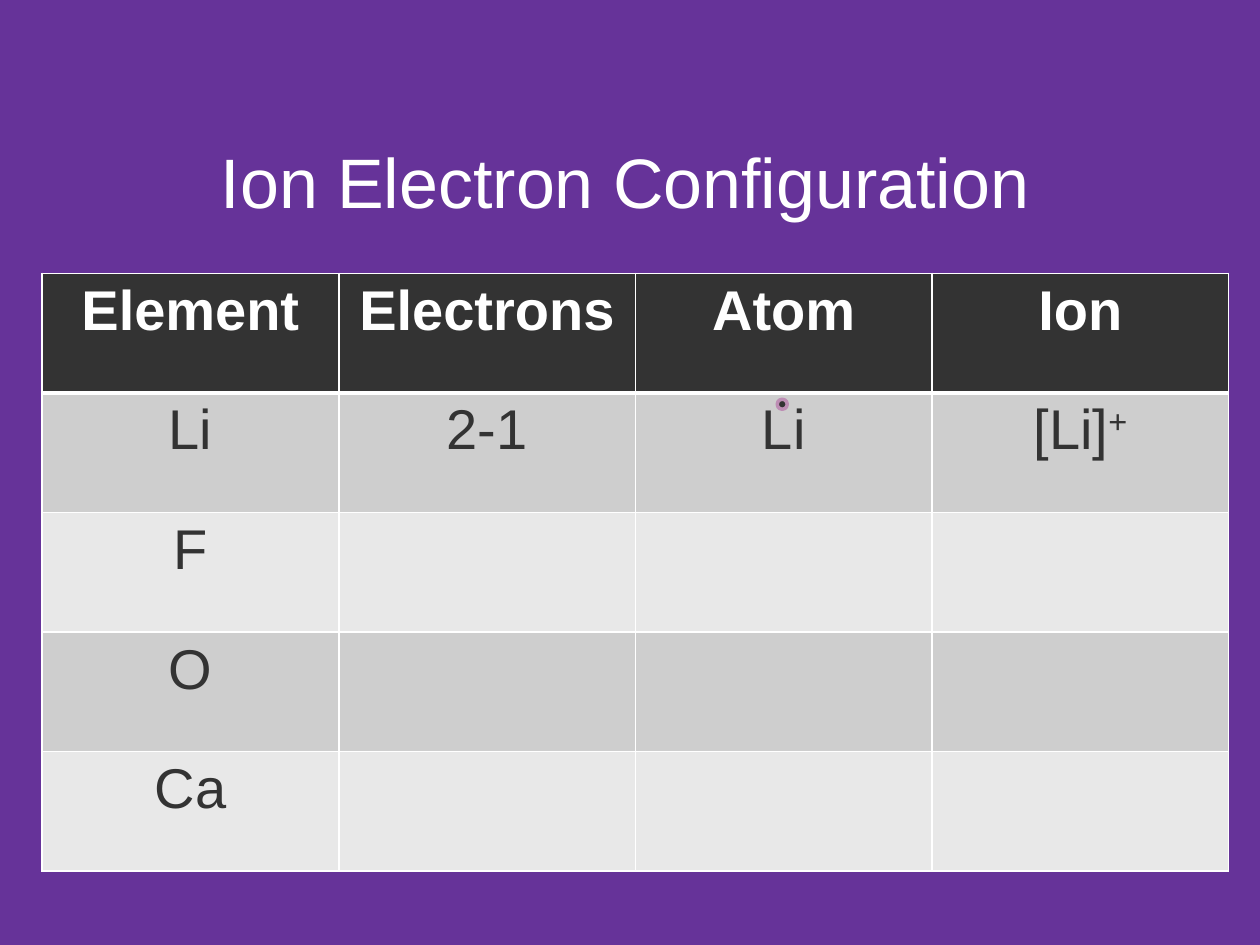
from dataclasses import dataclass

from lxml.etree import SubElement
from pptx import Presentation
from pptx.dml.color import RGBColor
from pptx.enum.shapes import MSO_SHAPE as Shape
from pptx.enum.text import MSO_ANCHOR as Anchor, MSO_AUTO_SIZE as AutoSize, PP_ALIGN as Align
from pptx.oxml.ns import qn
from pptx.util import Cm, Pt


@dataclass(frozen=True)
class Theme:
    font: str = "Arial"
    title_size: int = 40
    cell_size: int = 32
    background: str = "663399"
    light: str = "FFFFFF"
    dark: str = "333333"
    bands: tuple = ("CECECE", "E8E8E8")
    electron_ring: str = "BD8DB4"


THEME = Theme()

# Each cell is a list of (text, is_superscript) runs.
HEADERS = ["Element", "Electrons", "Atom", "Ion"]
ROWS = [
    [[("Li", False)], [("2-1", False)], [("Li", False)], [("[Li]", False), ("+", True)]],
    [[("F", False)]],
    [[("O", False)]],
    [[("Ca", False)]],
]


def paint(fill, color):
    fill.solid()
    fill.fore_color.rgb = RGBColor.from_string(color)


def add_run(paragraph, text, size, color, bold=False, superscript=False):
    run = paragraph.add_run()
    run.text = text
    run.font.name = THEME.font
    run.font.size = Pt(size)
    run.font.bold = bold
    run.font.color.rgb = RGBColor.from_string(color)
    if superscript:
        run.font._element.set("baseline", "30000")


def set_title(slide, text):
    title = slide.shapes.title
    title.left, title.top, title.width, title.height = Cm(1.27), Cm(2.54), Cm(22.66), Cm(3.68)
    frame = title.text_frame
    frame.word_wrap = True
    frame.auto_size = AutoSize.NONE
    frame.vertical_anchor = Anchor.TOP
    frame.margin_top = Cm(0.25)
    paragraph = frame.paragraphs[0]
    paragraph.alignment = Align.CENTER
    add_run(paragraph, text, THEME.title_size, THEME.light)


def set_borders(cell, bottom=1, top=1):
    """Draw the four cell borders; they must precede the fill in the XML."""
    properties = cell._tc.get_or_add_tcPr()
    for side, width in (("lnL", 1), ("lnR", 1), ("lnT", top), ("lnB", bottom)):
        line = SubElement(properties, qn(f"a:{side}"), w=str(Pt(width)))
        fill = SubElement(line, qn("a:solidFill"))
        SubElement(fill, qn("a:srgbClr"), val=THEME.light)


def fill_cell(cell, runs, fill, color, bold=False):
    paint(cell.fill, fill)
    paragraph = cell.text_frame.paragraphs[0]
    paragraph.alignment = Align.CENTER
    for text, superscript in runs:
        add_run(paragraph, text, THEME.cell_size, color, bold, superscript)


def add_ion_table(slide):
    table = slide.shapes.add_table(
        len(ROWS) + 1, len(HEADERS), Cm(0.85), Cm(5.51), Cm(23.92), Cm(12.05)
    ).table
    for column, header in enumerate(HEADERS):
        cell = table.cell(0, column)
        set_borders(cell, bottom=3)
        fill_cell(cell, [(header, False)], THEME.dark, THEME.light, bold=True)
    for index, row in enumerate(ROWS):
        for column in range(len(HEADERS)):
            cell = table.cell(index + 1, column)
            set_borders(cell, top=3 if index == 0 else 1)
            runs = row[column] if column < len(row) else []
            fill_cell(cell, runs, THEME.bands[index % 2], THEME.dark)


def add_electron(slide, left, top):
    electron = slide.shapes.add_shape(Shape.OVAL, left, top, Cm(0.2), Cm(0.2))
    electron.shadow.inherit = False
    paint(electron.fill, THEME.dark)
    paint(electron.line.fill, THEME.electron_ring)
    electron.line.width = Pt(2)


def main():
    presentation = Presentation()
    presentation.slide_width, presentation.slide_height = Cm(25.4), Cm(19.05)
    slide = presentation.slides.add_slide(presentation.slide_layouts[5])
    paint(slide.background.fill, THEME.background)
    set_title(slide, "Ion Electron Configuration")
    add_ion_table(slide)
    add_electron(slide, Cm(15.67), Cm(8.05))
    presentation.save("out.pptx")


if __name__ == "__main__":
    main()
